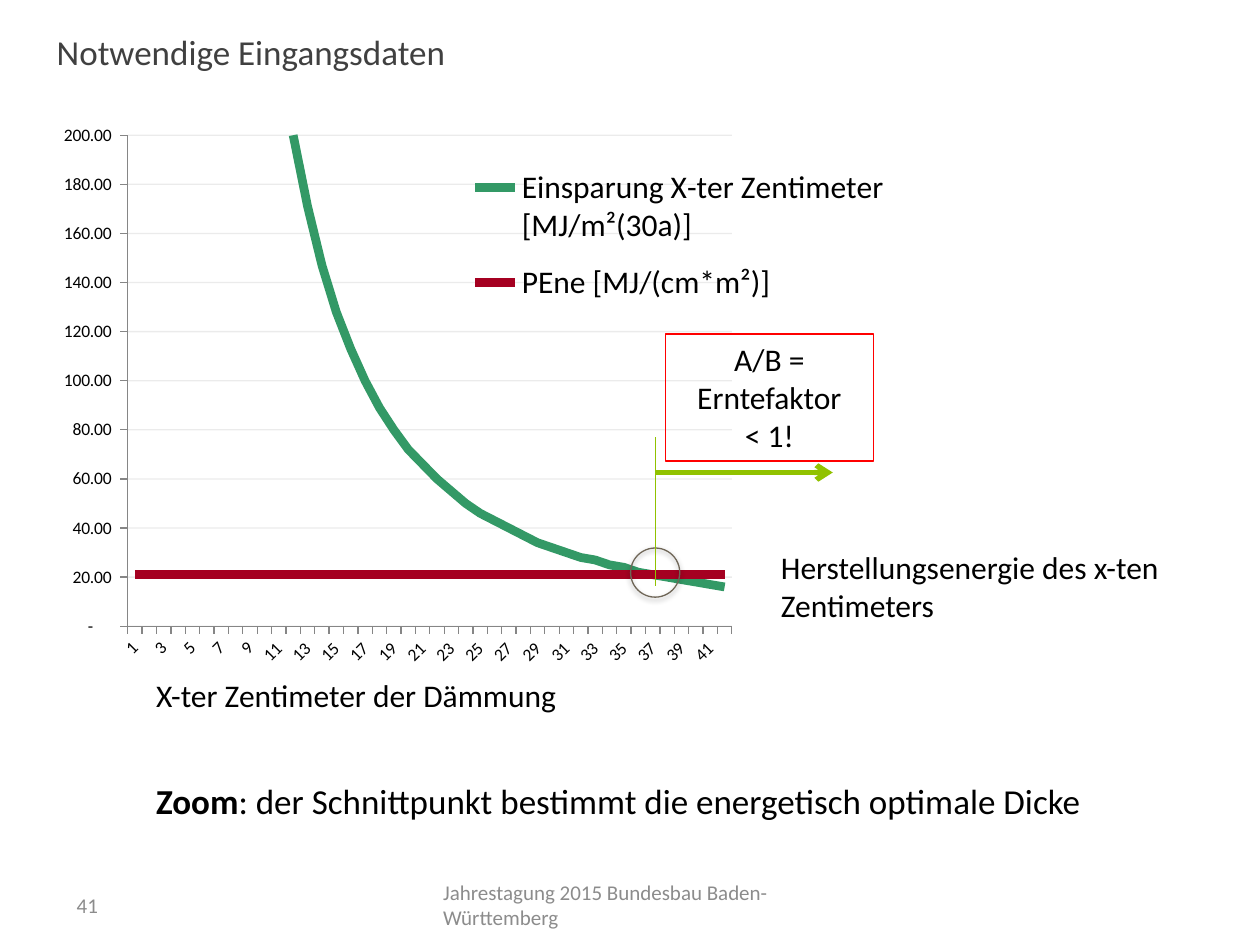
import pptx
import pptx.chart.data
import pptx.dml.color
import pptx.enum.chart
import pptx.enum.shapes
import pptx.enum.text
import pptx.oxml
import pptx.oxml.ns
import pptx.util
from lxml import etree

Pt = pptx.util.Pt
MIDDLE = pptx.enum.text.MSO_ANCHOR.MIDDLE
TOP = pptx.enum.text.MSO_ANCHOR.TOP
LEFT = pptx.enum.text.PP_ALIGN.LEFT
CENTER = pptx.enum.text.PP_ALIGN.CENTER
FONT = "Calibri"
BLACK, GREY, LIME = "000000", "8C8C8C", "91C200"

# Content: left, top, width, height in points
TITLE = ("Notwendige Eingangsdaten", (25.2, 10.1, 550, 38.9))
# runs (text, bold), place, size, colour, anchor, top inset
TEXTS = [
    ([("41", False)], (36.7, 502.6, 39.6, 28.8), 12, GREY, MIDDLE, 3.6),
    ([("Jahrestagung 2015 Bundesbau Baden-Württemberg", False)],
     (246.2, 502.6, 228.2, 28.8), 12, GREY, MIDDLE, 3.6),
    ([("Zoom", True), (": der Schnittpunkt bestimmt die energetisch optimale Dicke", False)],
     (82.1, 417.6, 607, 51.1), 20, BLACK, TOP, 28),
    ([("X-ter Zentimeter der Dämmung", False)],
     (82.1, 383, 351.4, 28.8), 18, BLACK, TOP, 3.6),
    ([("Herstellungsenergie des x-ten Zentimeters", False)],
     (439.2, 309.6, 266.4, 51.1), 18, BLACK, TOP, 3.6),
]
CHART_PLACE = (20.2, 66.2, 533.5, 316.8)
SAVING = [34563, 7391, 3220, 1803, 1152, 800, 588, 450, 356, 288, 239, 200, 171, 147,
          128, 113, 100, 89, 80, 72, 66, 60, 55, 50, 46, 43, 40, 37, 34, 32, 30, 28,
          27, 25, 24, 22, 21, 20, 19, 18, 17, 16]
SERIES = [
    ("Einsparung X-ter Zentimeter [MJ/m²(30a)]", SAVING, "339966"),
    ("PEne [MJ/(cm*m²)]", [21] * len(SAVING), "A50021"),
]
VALUE_FORMAT = '_(* #,##0.00_);_(* \\(#,##0.00\\);_(* "-"??_);_(@_)'
PLOT_AREA = (0.099, 0.035, 0.647, 0.886)
LEGEND_AREA = (0.43, 0.06, 0.52, 0.31)
HARVEST = ("A/B = Erntefaktor\v< 1!", (380.2, 190.8, 118.8, 72.7))
CROSSING = (374.4, 327.2)
RING = 28.1
# from x, from y, to x, to y, width, arrowhead
LINES = [
    (CROSSING[0], 270, 475.9, 270, 3, True),
    (CROSSING[0], 249.8, CROSSING[0], 334.8, 0.75, False),
]


def rgb(value):
    return pptx.dml.color.RGBColor.from_string(value)


def box(place):
    return [Pt(length) for length in place]


def set_font(font, size, colour=BLACK):
    font.name, font.size = FONT, Pt(size)
    font.color.rgb = rgb(colour)


def set_line(line, colour, width):
    line.color.rgb = rgb(colour)
    line.width = Pt(width)


def add_xml(parent, tag, **attributes):
    child = etree.SubElement(parent, pptx.oxml.ns.qn(tag))
    for key, value in attributes.items():
        child.set(key, str(value))
    return child


def manual_layout(element, area, inner=False):
    for old in element.findall(pptx.oxml.ns.qn("c:layout")):
        element.remove(old)
    layout = etree.Element(pptx.oxml.ns.qn("c:layout"))
    manual = add_xml(layout, "c:manualLayout")
    if inner:
        add_xml(manual, "c:layoutTarget", val="inner")
    for tag in ("c:xMode", "c:yMode"):
        add_xml(manual, tag, val="edge")
    for tag, value in zip(("c:x", "c:y", "c:w", "c:h"), area):
        add_xml(manual, tag, val=value)
    return layout


prs = pptx.Presentation()
prs.slide_width, prs.slide_height = Pt(720), Pt(540)
slide = prs.slides.add_slide(prs.slide_layouts[5])
shapes = slide.shapes

# Title
title = shapes.title
title.left, title.top, title.width, title.height = box(TITLE[1])
title.text_frame.text = TITLE[0]
title.text_frame.vertical_anchor = MIDDLE
heading = title.text_frame.paragraphs[0]
heading.alignment = LEFT
set_font(heading.font, 20, "404040")

# Texts
for runs, place, size, colour, anchor, inset in TEXTS:
    frame = shapes.add_textbox(*box(place)).text_frame
    frame.word_wrap = True
    frame.vertical_anchor = anchor
    frame.margin_top = Pt(inset)
    paragraph = frame.paragraphs[0]
    set_font(paragraph.font, size, colour)
    for words, bold in runs:
        run = paragraph.add_run()
        run.text = words
        if bold:
            run.font.bold = True

# Chart
data = pptx.chart.data.CategoryChartData()
data.categories = [str(cm) for cm in range(1, len(SAVING) + 1)]
for name, values, _ in SERIES:
    data.add_series(name, values)
chart = shapes.add_chart(pptx.enum.chart.XL_CHART_TYPE.LINE, *box(CHART_PLACE), data).chart
chart.has_title = False
set_font(chart.font, 10)
chart.plots[0].vary_by_categories = False
for series, (_, _, colour) in zip(chart.plots[0].series, SERIES):
    series.smooth = False
    series.marker.style = pptx.enum.chart.XL_MARKER_STYLE.NONE
    set_line(series.format.line, colour, 5)

value_axis, category_axis = chart.value_axis, chart.category_axis
for axis in (value_axis, category_axis):
    axis.major_tick_mark = pptx.enum.chart.XL_TICK_MARK.OUTSIDE
    set_line(axis.format.line, "868686", 0.75)
    set_font(axis.tick_labels.font, 10)
value_axis.minimum_scale, value_axis.maximum_scale, value_axis.major_unit = 0, 200, 20
value_axis.tick_labels.number_format = VALUE_FORMAT
value_axis.tick_labels.number_format_is_linked = False
grid = value_axis.major_gridlines.format.line
set_line(grid, "BFBFBF", 0.75)
for colour in value_axis.major_gridlines._xAx.iter(pptx.oxml.ns.qn("a:srgbClr")):
    if colour.get("val") == "BFBFBF":
        add_xml(colour, "a:alpha", val=30000)

# Every second category label, slanted
category_xml = category_axis._element
category_xml.find(".//" + pptx.oxml.ns.qn("a:bodyPr")).set("rot", "-2700000")
skip = etree.Element(pptx.oxml.ns.qn("c:tickLblSkip"), val="2")
category_xml.find(pptx.oxml.ns.qn("c:noMultiLvlLbl")).addprevious(skip)

# Plot and legend positions
plot_xml = chart._chartSpace.chart.plotArea
plot_xml.insert(0, manual_layout(plot_xml, PLOT_AREA, inner=True))
chart.has_legend = True
chart.legend.position = pptx.enum.chart.XL_LEGEND_POSITION.RIGHT
chart.legend.include_in_layout = False
set_font(chart.legend.font, 18)
legend_xml = chart.legend._element
legend_layout = manual_layout(legend_xml, LEGEND_AREA)
legend_xml.find(pptx.oxml.ns.qn("c:legendPos")).addnext(legend_layout)

# Ring around the crossing, with a soft shadow
ring = shapes.add_shape(pptx.enum.shapes.MSO_SHAPE.OVAL,
                        *box((CROSSING[0] - RING / 2, CROSSING[1] - RING / 2, RING, RING)))
ring.fill.background()
set_line(ring.line, "6F6657", 0.75)
effects = add_xml(ring._element.spPr, "a:effectLst")
shadow = add_xml(effects, "a:outerShdw", blurRad=Pt(3.1), dist=Pt(1.6), dir=5400000, rotWithShape=0)
add_xml(add_xml(shadow, "a:srgbClr", val=BLACK), "a:alpha", val=38000)

# Harvest factor box
harvest = shapes.add_textbox(*box(HARVEST[1]))
set_line(harvest.line, "FF0000", 0.75)
harvest.text_frame.word_wrap = True
harvest.text_frame.text = HARVEST[0]
factor = harvest.text_frame.paragraphs[0]
factor.alignment = CENTER
set_font(factor.font, 18)

# Arrow and marker line
for *ends, width, arrow in LINES:
    line = shapes.add_connector(pptx.enum.shapes.MSO_CONNECTOR.STRAIGHT, *box(ends))
    set_line(line.line, LIME, width)
    if arrow:
        add_xml(line.line._get_or_add_ln(), "a:tailEnd", type="arrow")
    add_xml(line._element.spPr, "a:effectLst")

prs.save("out.pptx")
